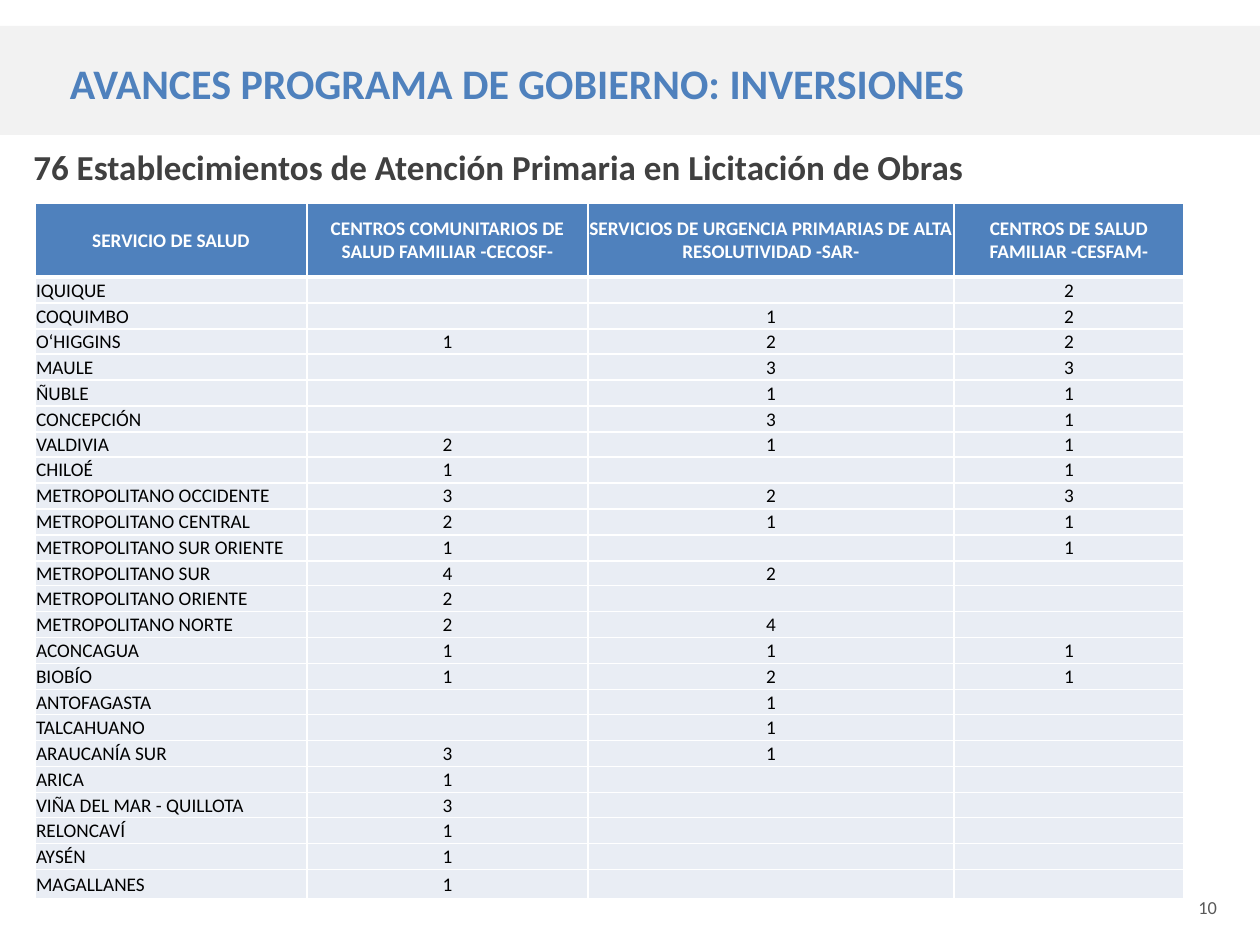
from dataclasses import dataclass

from lxml import etree
from pptx import Presentation
from pptx import util as u
from pptx.dml.color import RGBColor
from pptx.enum import text
from pptx.oxml.ns import qn

PX = 914400 // 126


@dataclass(frozen=True)
class Theme:
    """Colours, font and type sizes of the slide."""
    font: str = "Calibri"
    blue: str = "4F81BD"
    band: str = "F2F2F2"
    row: str = "E9EDF4"
    white: str = "FFFFFF"
    black: str = "000000"
    dark: str = "404040"
    grey: str = "595959"
    title: float = 24
    subtitle: float = 20
    table: float = 11
    number: float = 10.5


THEME = Theme()
COLUMNS = [272, 281, 366, 230]
HEADER_HEIGHT, LAST_HEIGHT = 74, 29
HEADERS = [
    "SERVICIO DE SALUD",
    "CENTROS COMUNITARIOS DE SALUD FAMILIAR -CECOSF-",
    "SERVICIOS DE URGENCIA PRIMARIAS DE ALTA RESOLUTIVIDAD -SAR-",
    "CENTROS DE SALUD FAMILIAR -CESFAM-",
]
SERVICES = [
    ("IQUIQUE", "", "", 2),
    ("COQUIMBO", "", 1, 2),
    ("O‘HIGGINS", 1, 2, 2),
    ("MAULE", "", 3, 3),
    ("ÑUBLE", "", 1, 1),
    ("CONCEPCIÓN", "", 3, 1),
    ("VALDIVIA", 2, 1, 1),
    ("CHILOÉ", 1, "", 1),
    ("METROPOLITANO OCCIDENTE", 3, 2, 3),
    ("METROPOLITANO CENTRAL", 2, 1, 1),
    ("METROPOLITANO SUR ORIENTE", 1, "", 1),
    ("METROPOLITANO SUR", 4, 2, ""),
    ("METROPOLITANO ORIENTE", 2, "", ""),
    ("METROPOLITANO NORTE", 2, 4, ""),
    ("ACONCAGUA", 1, 1, 1),
    ("BIOBÍO", 1, 2, 1),
    ("ANTOFAGASTA", "", 1, ""),
    ("TALCAHUANO", "", 1, ""),
    ("ARAUCANÍA SUR", 3, 1, ""),
    ("ARICA", 1, "", ""),
    ("VIÑA DEL MAR - QUILLOTA", 3, "", ""),
    ("RELONCAVÍ", 1, "", ""),
    ("AYSÉN", 1, "", ""),
    ("MAGALLANES", 1, "", ""),
]


def emu(box):
    """Turn a box in px into EMU."""
    return [length * PX for length in box]


def paint(target, colour):
    """Give a shape or cell a solid fill."""
    target.fill.solid()
    target.fill.fore_color.rgb = RGBColor.from_string(colour)


def style(paragraph, size, colour, bold=False, align=text.PP_ALIGN.LEFT):
    """Set the font and alignment of a paragraph."""
    paragraph.alignment = align
    font = paragraph.font
    font.name, font.size, font.bold = THEME.font, u.Pt(size), bold
    font.color.rgb = RGBColor.from_string(colour)


def add_title(slide, box, words):
    """Place the title as a full-width band."""
    title = slide.shapes.title
    title.left, title.top, title.width, title.height = emu(box)
    paint(title, THEME.band)
    frame = title.text_frame
    frame.text = words
    frame.auto_size = text.MSO_AUTO_SIZE.NONE
    frame.vertical_anchor = text.MSO_ANCHOR.MIDDLE
    frame.margin_left, frame.margin_top, frame.margin_bottom = emu((70, 10, 5))
    style(frame.paragraphs[0], THEME.title, THEME.blue, bold=True)


def add_label(slide, box, words, size, colour, bold=False, wrap=True):
    """Place one line of text in a text box."""
    frame = slide.shapes.add_textbox(*emu(box)).text_frame
    frame.word_wrap = wrap
    frame.text = words
    style(frame.paragraphs[0], size, colour, bold)


def add_borders(cell, bottom):
    """Draw white borders around a cell, with its own bottom width in points."""
    properties = cell._tc.get_or_add_tcPr()
    for side, width in (("lnL", 1), ("lnR", 1), ("lnT", 1), ("lnB", bottom)):
        line = etree.SubElement(properties, qn(f"a:{side}"), w=str(u.Pt(width)))
        fill = etree.SubElement(line, qn("a:solidFill"))
        etree.SubElement(fill, qn("a:srgbClr"), val=THEME.white)


def fill_cell(cell, value, header, align):
    """Write and format one table cell."""
    add_borders(cell, bottom=3 if header else 1)
    paint(cell, THEME.blue if header else THEME.row)
    cell.vertical_anchor = text.MSO_ANCHOR.MIDDLE
    cell.margin_left = cell.margin_top = cell.margin_right = PX
    cell.margin_bottom = 0
    cell.text = str(value)
    paragraph = cell.text_frame.paragraphs[0]
    style(paragraph, THEME.table, THEME.white if header else THEME.black, header, align)
    if value == "":
        paragraph._p.get_or_add_endParaRPr().set("sz", str(THEME.table * 100))


def add_services_table(slide, box):
    """Place the table of works by health service."""
    rows = [HEADERS, *SERVICES]
    table = slide.shapes.add_table(len(rows), len(COLUMNS), *emu(box)).table
    table.horz_banding = False
    for column, width in zip(table.columns, COLUMNS):
        column.width = width * PX
    regular = len(SERVICES) - 1
    space = box[3] - HEADER_HEIGHT - LAST_HEIGHT
    edges = [round(index * space / regular) for index in range(regular + 1)]
    heights = [after - before for before, after in zip(edges, edges[1:])]
    for row, height in zip(table.rows, [HEADER_HEIGHT, *heights, LAST_HEIGHT]):
        row.height = height * PX
    for row_index, values in enumerate(rows):
        header = row_index == 0
        for column_index, value in enumerate(values):
            centred = header or column_index > 0
            align = text.PP_ALIGN.CENTER if centred else text.PP_ALIGN.LEFT
            fill_cell(table.cell(row_index, column_index), value, header, align)


def main():
    """Build and save the slide."""
    presentation = Presentation()
    presentation.slide_width, presentation.slide_height = emu((1260, 945))
    slide = presentation.slides.add_slide(presentation.slide_layouts[5])
    add_title(slide, (0, 26, 1260, 109), "AVANCES PROGRAMA DE GOBIERNO: INVERSIONES")
    add_label(slide, (21, 139, 1194, 64),
              "76 Establecimientos de Atención Primaria en Licitación de Obras",
              THEME.subtitle, THEME.dark, bold=True)
    add_services_table(slide, (35, 203, sum(COLUMNS), 696))
    add_label(slide, (1186, 890, 60, 36), "10", THEME.number, THEME.grey, wrap=False)
    presentation.save("out.pptx")


if __name__ == "__main__":
    main()
